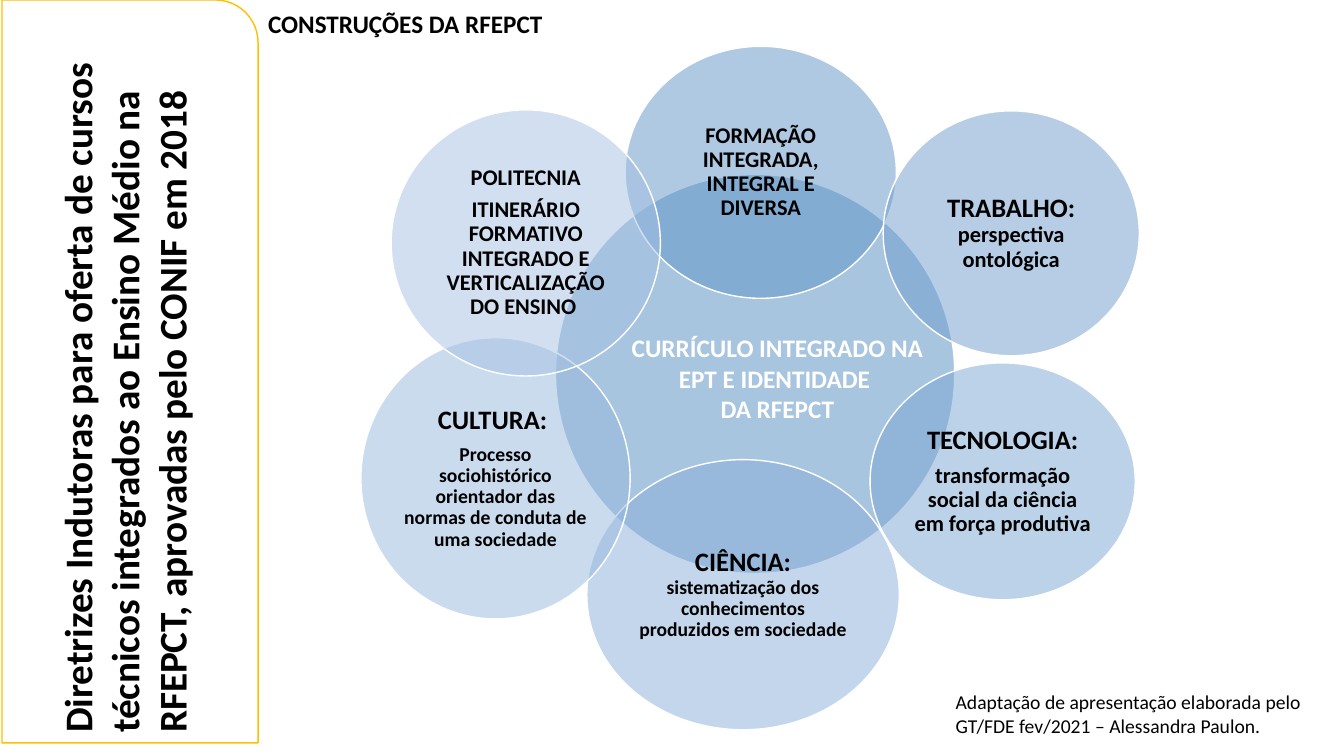
from lxml import etree
from pptx import Presentation
from pptx import util as u
from pptx.dml.color import RGBColor
from pptx.enum import shapes, text
from pptx.oxml import ns

COLORS = {
    "black": "000000",
    "white": "FFFFFF",
    "gold": "FFC000",
    "center": "538DC1",
    "formacao": "6095C7",
    "trabalho": "6E9DCD",
    "tecnologia": "7BA6D3",
    "ciencia": "89AFD8",
    "cultura": "97B8DE",
    "politecnia": "A5C1E3",
}

CIRCLES = [
    ("formacao", (6.2, 0.46, 2.69, 2.5),
     [[("FORMAÇÃO INTEGRADA, INTEGRAL E DIVERSA", 16)]]),
    ("trabalho", (8.76, 1.1, 2.54, 2.43),
     [[("TRABALHO: ", 19), ("perspectiva ontológica", 16)]]),
    ("tecnologia", (8.63, 3.6, 2.63, 2.35),
     [[("TECNOLOGIA:", 19)],
      [("transformação social da ciência em força produtiva", 16)]]),
    ("ciencia", (5.82, 4.56, 3.1, 2.68),
     [[("CIÊNCIA: ", 19),
       ("sistematização dos conhecimentos produzidos em sociedade", 14)]]),
    ("cultura", (3.58, 3.35, 2.67, 2.79),
     [[("CULTURA: ", 19)],
      [("Processo sociohistórico orientador das normas de conduta de uma sociedade", 14)]]),
    ("politecnia", (3.88, 1.09, 2.67, 2.64),
     [[("POLITECNIA", 16)],
      [("ITINERÁRIO FORMATIVO INTEGRADO E VERTICALIZAÇÃO DO ENSINO ", 16)]]),
]


def rgb(name):
    return RGBColor.from_string(COLORS[name])


def box(values):
    return [u.Inches(v) for v in values]


def write(sp, paragraphs, color="black", bold=True, align=text.PP_ALIGN.LEFT,
          anchor=text.MSO_ANCHOR.TOP, inset=None, spacing=None, after=0):
    tf = sp.text_frame
    tf.word_wrap = True
    tf.vertical_anchor = anchor
    if inset is not None:
        tf.margin_left = tf.margin_right = u.Inches(inset)
        tf.margin_top = tf.margin_bottom = u.Inches(inset)
    for i, runs in enumerate(paragraphs):
        p = tf.add_paragraph() if i else tf.paragraphs[0]
        p.alignment = align
        p.line_spacing = spacing
        p.space_after = u.Pt(round(after * runs[0][1], 1))
        for content, size in runs:
            r = p.add_run()
            r.text = content
            r.font.name = "Calibri"
            r.font.size = u.Pt(size)
            r.font.bold = bold
            r.font.color.rgb = rgb(color)


def add_shape(s, kind, at, fill, line, alpha=None):
    sp = s.shapes.add_shape(kind, *box(at))
    sp.shadow.inherit = False
    sp.fill.solid()
    sp.fill.fore_color.rgb = rgb(fill)
    sp.line.color.rgb = rgb(line)
    sp.line.width = u.Pt(1)
    if alpha is not None:
        clr = sp.fill._xPr.find(ns.qn("a:solidFill"))[0]
        etree.SubElement(clr, ns.qn("a:alpha"), val=str(alpha * 1000))
    return sp


def add_circle(s, at, fill):
    return add_shape(s, shapes.MSO_SHAPE.OVAL, at, fill, "white", alpha=50)


def add_text(s, at, paragraphs, **fmt):
    write(s.shapes.add_textbox(*box(at)), paragraphs, **fmt)


def add_side_title(s, at, content):
    sp = add_shape(s, shapes.MSO_SHAPE.ROUND_1_RECTANGLE, at, "white", "gold")
    write(sp, [[(content, 28)]], anchor=text.MSO_ANCHOR.MIDDLE)
    sp.text_frame._txBody.bodyPr.set("vert", "vert270")


def main():
    prs = Presentation()
    prs.slide_width = u.Inches(13.33)
    prs.slide_height = u.Inches(7.5)
    s = prs.slides.add_slide(prs.slide_layouts[6])

    add_circle(s, (5.51, 1.73, 3.96, 3.96), "center")
    for fill, at, paragraphs in CIRCLES:
        write(add_circle(s, at, fill), paragraphs, align=text.PP_ALIGN.CENTER,
              anchor=text.MSO_ANCHOR.MIDDLE, inset=0.03, spacing=0.9, after=0.35)

    add_text(s, (6.04, 3.25, 3.34, 1.01),
             [[("CURRÍCULO INTEGRADO NA EPT E IDENTIDADE ", 18)], [("DA RFEPCT", 18)]],
             color="white", align=text.PP_ALIGN.CENTER)
    add_side_title(s, (0.02, 0, 2.54, 7.37),
                   "Diretrizes Indutoras para oferta de cursos técnicos integrados ao "
                   "Ensino Médio na RFEPCT, aprovadas pelo CONIF em 2018")
    add_text(s, (9.38, 6.8, 3.82, 0.57),
             [[("Adaptação de apresentação elaborada pelo GT/FDE fev/2021 – "
                "Alessandra Paulon.", 14)]], bold=False)
    add_text(s, (2.56, 0.03, 10.51, 0.4), [[("CONSTRUÇÕES DA RFEPCT", 18)]])
    prs.save("out.pptx")


if __name__ == "__main__":
    main()
